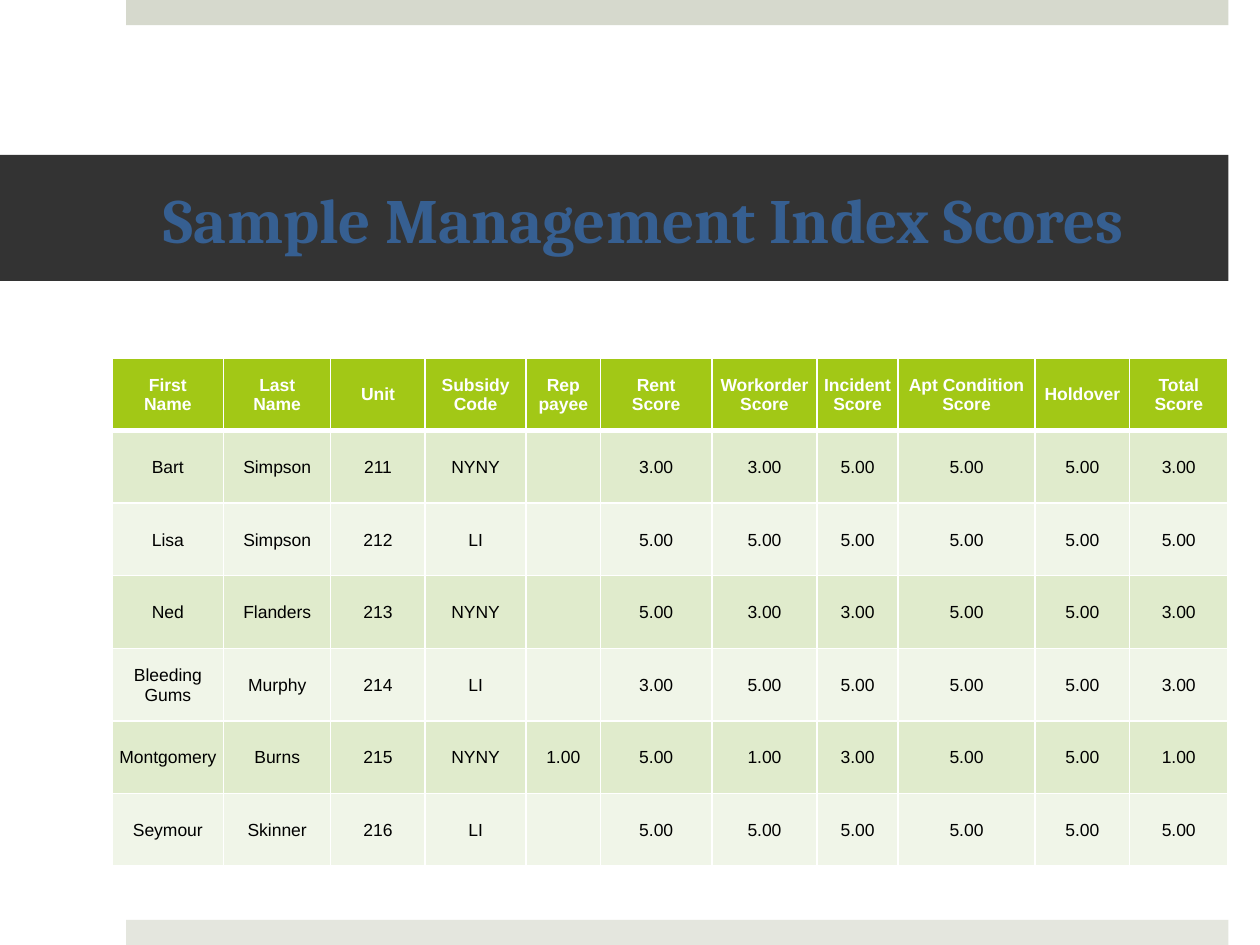
from typing import NamedTuple

from lxml import etree
from pptx import Presentation
from pptx import util as u
from pptx.dml.color import RGBColor
from pptx.enum import shapes, text
from pptx.oxml import ns

COLORS = {
    "top_bar": "D6D9CD",
    "bottom_bar": "E4E6DE",
    "title_band": "333333",
    "title": "365F91",
    "header": "A2C816",
    "odd_row": "E0EBCC",
    "even_row": "F0F5E8",
    "white": "FFFFFF",
    "black": "000000",
}


class Band(NamedTuple):
    left: float
    top: float
    width: float
    height: float
    color: str


class Column(NamedTuple):
    heading: str
    width: float


class RowStyle(NamedTuple):
    fill: str
    font_color: str
    bold: bool
    top_border: float
    bottom_border: float


TOP_BAR = Band(72, 0, 630, 14.4, "top_bar")
BOTTOM_BAR = Band(72, 525.6, 630, 14.4, "bottom_bar")
TITLE_BAND = Band(0, 88.5, 702, 72, "title_band")

TABLE_LEFT, TABLE_TOP, ROW_HEIGHT = 64, 204.5, 41.5
THIN, THICK = 1, 3
COLUMNS = [
    Column("First\nName", 63.8),
    Column("Last\nName", 61.2),
    Column("Unit", 54),
    Column("Subsidy\nCode", 57.6),
    Column("Rep payee", 42.6),
    Column("Rent\nScore", 63.6),
    Column("Workorder\nScore", 60.2),
    Column("Incident\nScore", 46.2),
    Column("Apt Condition\nScore", 78.4),
    Column("Holdover", 54),
    Column("Total\nScore", 56.2),
]
TENANTS = [
    ("Bart", "Simpson", "211", "NYNY", "", "3.00", "3.00", "5.00", "5.00", "5.00", "3.00"),
    ("Lisa", "Simpson", "212", "LI", "", "5.00", "5.00", "5.00", "5.00", "5.00", "5.00"),
    ("Ned", "Flanders", "213", "NYNY", "", "5.00", "3.00", "3.00", "5.00", "5.00", "3.00"),
    ("Bleeding Gums", "Murphy", "214", "LI", "", "3.00", "5.00", "5.00", "5.00", "5.00", "3.00"),
    ("Montgomery", "Burns", "215", "NYNY", "1.00", "5.00", "1.00", "3.00", "5.00", "5.00", "1.00"),
    ("Seymour", "Skinner", "216", "LI", "", "5.00", "5.00", "5.00", "5.00", "5.00", "5.00"),
]


def rgb(name: str) -> RGBColor:
    return RGBColor.from_string(COLORS[name])


def style_font(font, face: str, size: float, color: str, bold: bool) -> None:
    font.name, font.size, font.bold = face, u.Pt(size), bold
    font.color.rgb = rgb(color)


def set_margins(target, left: float, top: float, right: float, bottom: float) -> None:
    target.margin_left, target.margin_top = u.Pt(left), u.Pt(top)
    target.margin_right, target.margin_bottom = u.Pt(right), u.Pt(bottom)


def add_band(slide, band: Band):
    rect = slide.shapes.add_shape(
        shapes.MSO_SHAPE.RECTANGLE,
        u.Pt(band.left), u.Pt(band.top), u.Pt(band.width), u.Pt(band.height),
    )
    rect.shadow.inherit = False
    rect.fill.solid()
    rect.fill.fore_color.rgb = rgb(band.color)
    rect.line.fill.background()
    return rect


def add_title(slide, wording: str) -> None:
    frame = add_band(slide, TITLE_BAND).text_frame
    frame.word_wrap = True
    frame.vertical_anchor = text.MSO_ANCHOR.MIDDLE
    set_margins(frame, 93.6, 3.6, 21.6, 3.6)
    frame.text = wording
    title = frame.paragraphs[0]
    title.alignment = text.PP_ALIGN.LEFT
    style_font(title.runs[0].font, "Cambria", 36, "title", True)


def set_borders(cell, top: float, bottom: float) -> None:
    """Add white borders; must run before the cell fill, which follows them in the XML."""
    properties = cell._tc.get_or_add_tcPr()
    for side, width in (("L", THIN), ("R", THIN), ("T", top), ("B", bottom)):
        line = etree.SubElement(properties, ns.qn(f"a:ln{side}"), w=str(u.Pt(width)))
        solid = etree.SubElement(line, ns.qn("a:solidFill"))
        etree.SubElement(solid, ns.qn("a:srgbClr"), val=COLORS["white"])


def fill_cell(cell, wording: str, style: RowStyle) -> None:
    set_borders(cell, style.top_border, style.bottom_border)
    cell.fill.solid()
    cell.fill.fore_color.rgb = rgb(style.fill)
    cell.vertical_anchor = text.MSO_ANCHOR.MIDDLE
    set_margins(cell, 0.72, 0.72, 0.72, 0)
    cell.text_frame.text = wording
    for paragraph in cell.text_frame.paragraphs:
        paragraph.alignment = text.PP_ALIGN.CENTER
        for run in paragraph.runs:
            style_font(run.font, "Arial", 10, style.font_color, style.bold)


def row_style(index: int) -> RowStyle:
    if index == 0:
        return RowStyle("header", "white", True, THIN, THICK)
    fill = "odd_row" if index % 2 else "even_row"
    return RowStyle(fill, "black", False, THICK if index == 1 else THIN, THIN)


def add_score_table(slide) -> None:
    rows = [[column.heading for column in COLUMNS], *TENANTS]
    scores = slide.shapes.add_table(
        len(rows), len(COLUMNS), u.Pt(TABLE_LEFT), u.Pt(TABLE_TOP),
        u.Pt(sum(column.width for column in COLUMNS)), u.Pt(ROW_HEIGHT * len(rows)),
    ).table
    for grid_column, column in zip(scores.columns, COLUMNS):
        grid_column.width = u.Pt(column.width)
    for r, row in enumerate(rows):
        scores.rows[r].height = u.Pt(ROW_HEIGHT)
        for c, wording in enumerate(row):
            fill_cell(scores.cell(r, c), wording, row_style(r))


def main() -> None:
    deck = Presentation()
    deck.slide_width, deck.slide_height = u.Pt(720), u.Pt(540)
    slide = deck.slides.add_slide(deck.slide_layouts[6])
    add_band(slide, TOP_BAR)
    add_band(slide, BOTTOM_BAR)
    add_title(slide, "Sample Management Index Scores")
    add_score_table(slide)
    deck.save("out.pptx")


if __name__ == "__main__":
    main()
